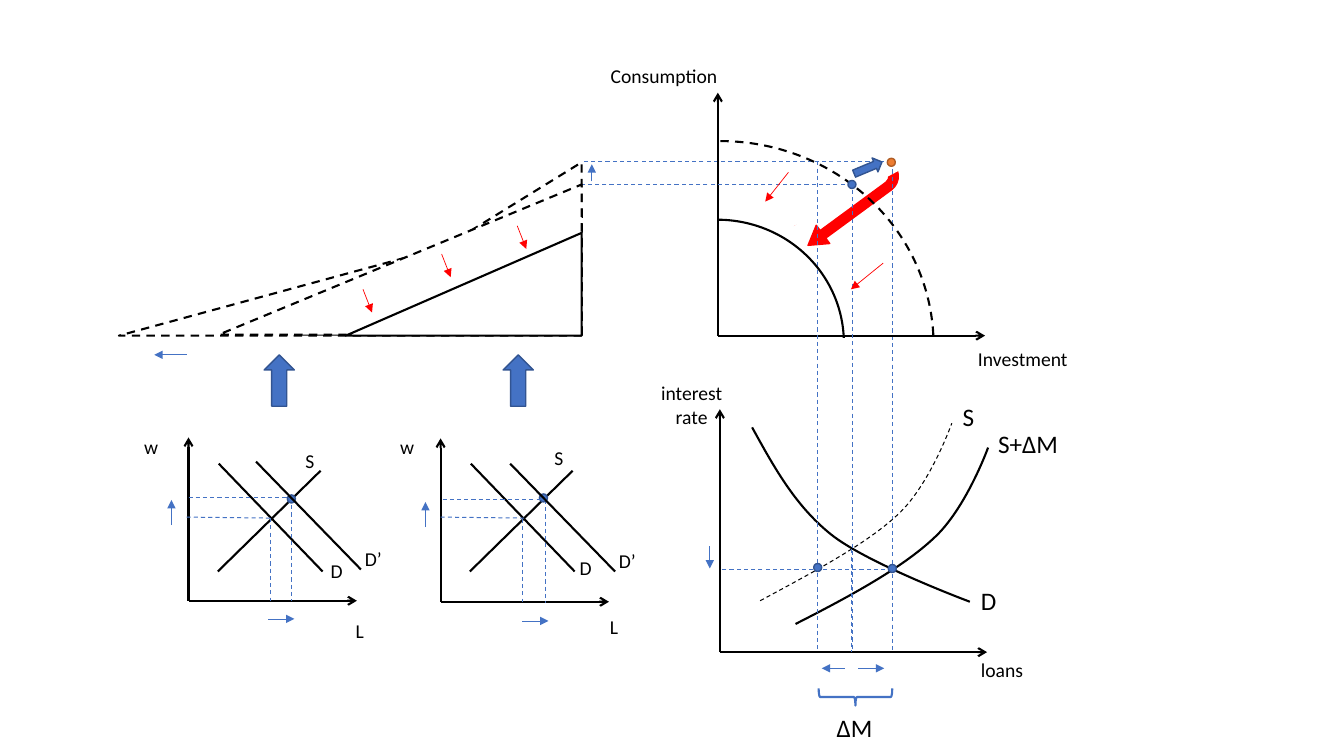
from dataclasses import dataclass
from typing import NamedTuple

from lxml import etree
from pptx import Presentation
from pptx.dml.color import RGBColor
from pptx.enum.dml import MSO_LINE
from pptx.enum.shapes import MSO_CONNECTOR, MSO_SHAPE
from pptx.enum.text import MSO_AUTO_SIZE, PP_ALIGN
from pptx.oxml.ns import qn
from pptx.util import Inches, Pt

DASH = MSO_LINE.DASH
STRAIGHT = MSO_CONNECTOR.STRAIGHT
LEFT, CENTER = PP_ALIGN.LEFT, PP_ALIGN.CENTER
FIT_TEXT = MSO_AUTO_SIZE.SHAPE_TO_FIT_TEXT
ARC, BRACE, OVAL = MSO_SHAPE.ARC, MSO_SHAPE.LEFT_BRACE, MSO_SHAPE.OVAL
RECTANGLE, TRIANGLE = MSO_SHAPE.RECTANGLE, MSO_SHAPE.RIGHT_TRIANGLE
UP_ARROW, RIGHT_ARROW = MSO_SHAPE.UP_ARROW, MSO_SHAPE.RIGHT_ARROW
U_TURN_ARROW = MSO_SHAPE.U_TURN_ARROW


@dataclass(frozen=True)
class Theme:
    black: str = "000000"
    white: str = "FFFFFF"
    red: str = "FF0000"
    blue: str = "4472C4"
    blue_edge: str = "325491"
    orange: str = "ED7D31"
    orange_edge: str = "AF5C24"
    font: str = "Calibri"
    small: int = 14
    large: int = 18


THEME = Theme()


class Stroke(NamedTuple):
    color: str
    width: float
    dashed: bool = False
    head: str = ""


AXIS = Stroke(THEME.black, 1.5, head="arrow")
SOLID = Stroke(THEME.black, 1.5)
DASHED = Stroke(THEME.black, 1.5, True)
THIN_DASHED = Stroke(THEME.black, 0.75, True)
GUIDE = Stroke(THEME.blue, 0.75, True)
CHANGE = Stroke(THEME.blue, 0.5, head="triangle")
SHRINK = Stroke(THEME.red, 0.5, head="triangle")
RED_EDGE = Stroke(THEME.red, 1)
WHITE_EDGE = Stroke(THEME.white, 1)
BLUE_EDGE = Stroke(THEME.blue_edge, 1)
ORANGE_EDGE = Stroke(THEME.orange_edge, 1)
BRACKET = Stroke(THEME.blue, 1.5)


class Line(NamedTuple):
    x1: float
    y1: float
    x2: float
    y2: float
    stroke: Stroke
    shift: tuple = ()


class Label(NamedTuple):
    text: str
    x: float
    y: float
    width: float
    size: int = THEME.small
    align: PP_ALIGN = LEFT
    shift: tuple = ()


class Dot(NamedTuple):
    x: float
    y: float
    fill: str = THEME.blue
    stroke: Stroke = BLUE_EDGE
    shift: tuple = ()


class Figure(NamedTuple):
    kind: MSO_SHAPE
    x: float
    y: float
    width: float
    height: float
    stroke: Stroke
    fill: str = ""
    rotation: float = 0
    adjustments: tuple = ()
    flipped: bool = False


class Curve(NamedTuple):
    points: tuple
    stroke: Stroke


QUARTER = (162, 214.698)
AXIS_SHIFT, MARKET_SHIFT, SHOCK_SHIFT = (2.5, 0.01), (2.5, 0), (2.52, 0.02)
LABEL_SHIFT = (2.47, -0.03)

CAPITAL_FLIGHT = [
    Figure(U_TURN_ARROW, 8.19, 1.42, 0.45, 1.16, RED_EDGE, THEME.red, 53.7, (0.207, 0.25, 0.408, 0.372, 1)),
    Figure(RECTANGLE, 7.56, 1.67, 1.6, 0.29, WHITE_EDGE, THEME.white, 332.2),
]
CAPITAL_MARKET = [
    Line(8.84, 1.6, 5.77, 1.6, GUIDE),
    Line(8.85, 1.61, 8.85, 6.48, GUIDE),
    Line(7.14, 6.47, 7.14, 4.06, AXIS),
    Line(7.14, 6.47, 9.79, 6.47, AXIS),
    Curve(((7.46, 4.24), (7.67, 4.62), (7.88, 5.01), (8.24, 5.3), (8.6, 5.59), (9.62, 5.97), (9.62, 5.97)), SOLID),
    Curve(((7.54, 5.96), (8.06, 5.68), (8.59, 5.4), (8.9, 5.11), (9.22, 4.82), (9.44, 4.2), (9.44, 4.2)), THIN_DASHED),
    Curve(((7.89, 6.19), (8.42, 5.92), (8.94, 5.64), (9.26, 5.34), (9.58, 5.05), (9.8, 4.44), (9.8, 4.44)), SOLID),
    Line(8.45, 5.45, 8.45, 6.47, GUIDE),
    Line(7.12, 3.33, 7.12, 0.92, AXIS),
    Line(7.12, 3.33, 9.77, 3.33, AXIS),
    Line(8.46, 1.81, 8.46, 6.44, GUIDE),
    Figure(ARC, 5.03, 1.4, 4.23, 4.04, DASHED, adjustments=QUARTER),
    Line(8.45, 1.83, 5.77, 1.83, GUIDE),
    Line(8.78, 5.65, 7.14, 5.65, GUIDE),
    Line(8.11, 1.6, 8.11, 6.46, GUIDE),
    Dot(8.45, 1.83),
    Dot(8.11, 5.63),
    Dot(8.85, 5.64),
    Dot(8.84, 1.61, THEME.orange, ORANGE_EDGE),
    Line(7.04, 5.42, 7.04, 5.64, CHANGE),
    Line(8.51, 6.63, 8.77, 6.63, CHANGE),
    Line(8.38, 6.63, 8.15, 6.63, CHANGE),
    Figure(BRACE, 8.4, 6.55, 0.17, 0.73, BRACKET, rotation=270),
    Label("interest\nrate", 6.44, 3.73, 0.84, align=CENTER),
    Label("loans", 9.63, 6.48, 0.63),
    Label("S", 9.45, 3.93, 0.32, THEME.large),
    Label("D", 9.63, 5.76, 0.37, THEME.large),
    Label("S+∆M", 9.8, 4.2, 0.82, THEME.large),
    Label("∆M", 8.2, 7.02, 0.61, THEME.large),
    Label("Consumption", 5.89, 0.58, 1.39, align=CENTER),
    Label("Investment", 9.53, 3.39, 1.23, align=CENTER),
]
LABOUR_MARKET = [
    Line(1.87, 5.96, 1.87, 4.34, AXIS, AXIS_SHIFT),
    Line(1.87, 5.96, 3.54, 5.96, AXIS, AXIS_SHIFT),
    Line(2.17, 4.6, 3.2, 5.67, SOLID, MARKET_SHIFT),
    Line(3.18, 4.67, 2.16, 5.67, SOLID, MARKET_SHIFT),
    Line(1.85, 5.13, 2.7, 5.14, GUIDE, (2.52, 0)),
    Line(2.68, 5.14, 2.68, 5.96, GUIDE, AXIS_SHIFT),
    Dot(2.89, 4.95, shift=(2.5, -0.01)),
    Line(1.87, 4.94, 2.86, 4.94, GUIDE, SHOCK_SHIFT),
    Line(2.89, 4.94, 2.89, 5.96, GUIDE, SHOCK_SHIFT),
    Line(2.54, 4.58, 3.58, 5.65, SOLID, SHOCK_SHIFT),
    Line(1.7, 5.21, 1.7, 4.96, CHANGE, SHOCK_SHIFT),
    Line(2.66, 6.14, 2.92, 6.14, CHANGE, SHOCK_SHIFT),
    Label("w", 1.33, 4.27, 0.32, shift=(2.54, 0)),
    Label("L", 3.43, 6.09, 0.32, shift=(2.52, -0.04)),
    Label("D’", 3.52, 5.38, 0.47, shift=SHOCK_SHIFT),
    Label("D", 3.18, 5.5, 0.47, shift=LABEL_SHIFT),
    Label("S", 2.93, 4.4, 0.47, shift=LABEL_SHIFT),
]
PRODUCTION = [
    *[Figure(UP_ARROW, x, 3.52, 0.3, 0.51, BLUE_EDGE, THEME.blue) for x in (2.62, 4.99)],
    Figure(TRIANGLE, 3, 1.61, 2.77, 1.71, DASHED, flipped=True),
    Line(5.87, 1.8, 5.87, 1.63, CHANGE),
    Figure(TRIANGLE, 1.18, 2.08, 4.59, 1.25, DASHED, flipped=True),
    Figure(TRIANGLE, 2.17, 1.83, 3.6, 1.49, DASHED, THEME.white, flipped=True),
    Line(1.85, 3.52, 1.53, 3.52, CHANGE),
    Figure(RIGHT_ARROW, 8.46, 1.59, 0.3, 0.15, BLUE_EDGE, THEME.blue, 337.3),
    Figure(ARC, 5.86, 2.18, 2.51, 2.44, SOLID, adjustments=QUARTER),
    Line(7.82, 1.71, 7.59, 2, SHRINK),
    Line(8.76, 2.61, 8.44, 2.87, SHRINK),
    Figure(TRIANGLE, 3.43, 2.31, 2.34, 1.02, SOLID, THEME.white, flipped=True),
    *[Line(x, y, x + 0.09, y + 0.23, SHRINK) for x, y in ((5.13, 2.24), (3.6, 2.87), (4.38, 2.52))],
]


def apply_stroke(shape, stroke: Stroke) -> None:
    """Set the colour, width, dash and arrowhead of an outline."""
    shape.line.color.rgb = RGBColor.from_string(stroke.color)
    shape.line.width = Pt(stroke.width)
    if stroke.dashed:
        shape.line.dash_style = DASH
    if stroke.head:
        etree.SubElement(shape.line._get_or_add_ln(), qn("a:tailEnd"), type=stroke.head)


def draw_line(slide, line: Line) -> None:
    """Draw a straight line or thin arrow."""
    ends = [Inches(value) for value in line[:4]]
    connector = slide.shapes.add_connector(STRAIGHT, *ends)
    apply_stroke(connector, line.stroke)
    etree.SubElement(connector._element.spPr, qn("a:effectLst"))


def draw_figure(slide, figure: Figure) -> None:
    """Draw a preset shape."""
    shape = slide.shapes.add_shape(figure.kind, *[Inches(value) for value in figure[1:5]])
    shape.shadow.inherit = False
    shape.rotation = figure.rotation
    for index, value in enumerate(figure.adjustments):
        shape.adjustments[index] = value
    if figure.fill:
        shape.fill.solid()
        shape.fill.fore_color.rgb = RGBColor.from_string(figure.fill)
    else:
        shape.fill.background()
    apply_stroke(shape, figure.stroke)
    if figure.flipped:
        shape._element.spPr.get_or_add_xfrm().set("flipH", "1")


def draw_dot(slide, dot: Dot) -> None:
    """Draw an equilibrium point around its centre."""
    draw_figure(slide, Figure(OVAL, dot.x - 0.04, dot.y - 0.04, 0.08, 0.08, dot.stroke, dot.fill))


def draw_curve(slide, curve: Curve) -> None:
    """Draw a chain of cubic Bezier segments."""
    start, *controls = [(Inches(x), Inches(y)) for x, y in curve.points]
    builder = slide.shapes.build_freeform(*start)
    builder.add_line_segments(controls, close=False)
    shape = builder.convert_to_shape()
    segments = list(shape._element.iter(qn("a:lnTo")))
    for index in range(0, len(segments), 3):
        bezier = etree.Element(qn("a:cubicBezTo"))
        segments[index].addprevious(bezier)
        for segment in segments[index:index + 3]:
            bezier.append(segment[0])
            segment.getparent().remove(segment)
    shape.shadow.inherit = False
    shape.fill.background()
    apply_stroke(shape, curve.stroke)


def draw_label(slide, label: Label) -> None:
    """Draw a text label, one paragraph per line."""
    height = 0.1 + label.size * 1.22 / 72 * (label.text.count("\n") + 1)
    box = slide.shapes.add_textbox(Inches(label.x), Inches(label.y), Inches(label.width), Inches(height))
    frame = box.text_frame
    frame.text = label.text
    frame.word_wrap = True
    frame.auto_size = FIT_TEXT
    for paragraph in frame.paragraphs:
        paragraph.alignment = label.align
        paragraph.font.name = THEME.font
        paragraph.font.size = Pt(label.size)
        paragraph.font.color.rgb = RGBColor.from_string(THEME.black)


def shifted(item: Line | Label | Dot) -> Line | Label | Dot:
    """Move a labour market element to the second market."""
    across, down = item.shift
    if isinstance(item, Line):
        return item._replace(x1=item.x1 + across, x2=item.x2 + across, y1=item.y1 + down, y2=item.y2 + down)
    return item._replace(x=item.x + across, y=item.y + down)


DRAWERS = {Line: draw_line, Figure: draw_figure, Dot: draw_dot, Curve: draw_curve, Label: draw_label}


def main() -> None:
    """Build the slide and save it."""
    presentation = Presentation()
    presentation.slide_width, presentation.slide_height = Inches(13.33), Inches(7.5)
    slide = presentation.slides.add_slide(presentation.slide_layouts[6])
    second_market = [shifted(item) for item in LABOUR_MARKET]
    for item in CAPITAL_FLIGHT + CAPITAL_MARKET + LABOUR_MARKET + second_market + PRODUCTION:
        DRAWERS[type(item)](slide, item)
    presentation.save("out.pptx")


if __name__ == "__main__":
    main()
